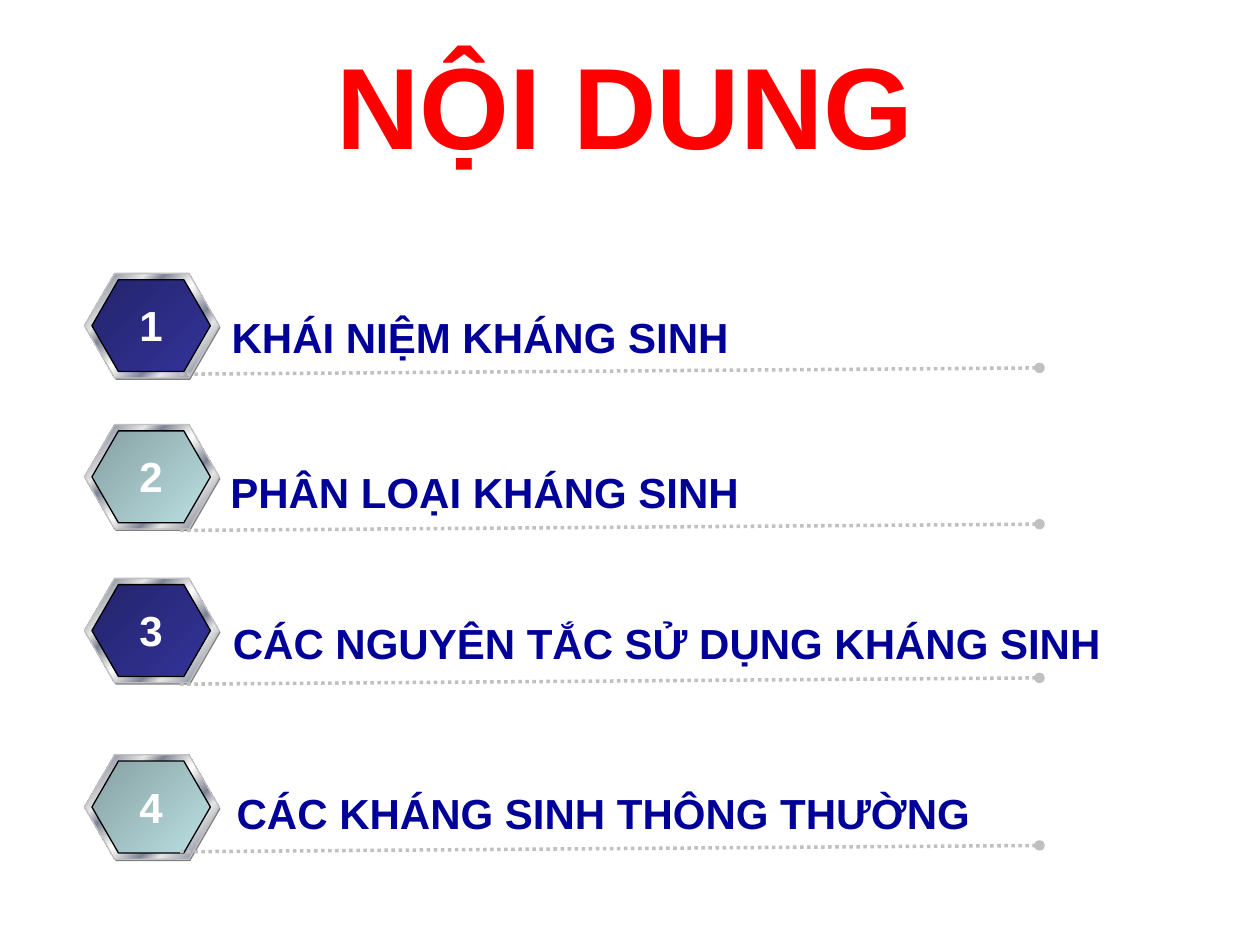
from dataclasses import dataclass

from lxml.etree import SubElement
from pptx import Presentation
from pptx.dml.color import RGBColor
from pptx.enum.dml import MSO_LINE
from pptx.enum.shapes import MSO_CONNECTOR, MSO_SHAPE
from pptx.enum.text import MSO_ANCHOR, PP_ALIGN
from pptx.oxml.ns import qn
from pptx.util import Inches, Pt

COLORS = {
    "title": "FF0000", "label": "000099", "number": "FFFFFF",
    "shadow": "808080", "rim": "C0C0C0", "edge": "000000", "rule": "C0C0C0",
    "silver": "E6E6E6", "steel": "7D8496", "shine": "FFFFFF",
    "navy_dark": "24246D", "navy": "333399",
    "teal_dark": "86A0A2", "teal": "BBE0E3",
}
COLS, ROWS = 100, 75
WIDTH, HEIGHT = Inches(10), Inches(7.5)
METAL = [(0, "silver"), (8, "steel"), (26, "silver"), (34, "steel"),
         (46, "silver"), (50, "shine"), (54, "silver"), (66, "steel"),
         (74, "silver"), (92, "steel"), (100, "silver")]
NAVY = [(0, "navy_dark"), (100, "navy")]
TEAL = [(0, "teal_dark"), (100, "teal")]


@dataclass
class Item:
    """An agenda entry placed in grid columns and rows."""
    text: str
    top: float
    label_col: float
    label_row: float
    rule_row: float


ITEMS = [
    Item("KHÁI NIỆM KHÁNG SINH", 21.7, 17.4, 24.2, 29.7),
    Item("PHÂN LOẠI KHÁNG SINH", 33.7, 17.3, 36.5, 42.1),
    Item("CÁC NGUYÊN TẮC SỬ DỤNG KHÁNG SINH", 45.9, 17.5, 48.5, 54.3),
    Item("CÁC KHÁNG SINH THÔNG THƯỜNG", 59.9, 17.8, 62, 67.6),
]


def x(col: float) -> int:
    """Convert columns to a length."""
    return int(WIDTH * col / COLS)


def y(row: float) -> int:
    """Convert rows to a length."""
    return int(HEIGHT * row / ROWS)


def rgb(name: str) -> RGBColor:
    """Look up a named colour."""
    return RGBColor.from_string(COLORS[name])


def add_text(s, text: str, col: float, row: float, cols: float, rows: float,
             size: float, color: str, align=PP_ALIGN.LEFT,
             anchor=MSO_ANCHOR.TOP) -> None:
    """Add one bold line of text."""
    tf = s.shapes.add_textbox(x(col), y(row), x(cols), y(rows)).text_frame
    tf.word_wrap = True
    tf.vertical_anchor = anchor
    p = tf.paragraphs[0]
    p.text = text
    p.alignment = align
    p.font.name, p.font.size, p.font.bold = "Arial", Pt(size), True
    p.font.color.rgb = rgb(color)


def add_hexagon(s, col: float, row: float, cols: float, rows: float):
    """Add a hexagon without a shadow."""
    sp = s.shapes.add_shape(MSO_SHAPE.HEXAGON, x(col), y(row), x(cols), y(rows))
    sp.adjustments[0] = 0.289
    sp.shadow.inherit = False
    return sp


def set_gradient(sp, stops: list[tuple[int, str]], edge: str) -> None:
    """Fill with a diagonal gradient and outline the shape."""
    sp.fill.gradient()
    sp.fill.gradient_angle = 315
    gs_list = sp._element.spPr.find(qn("a:gradFill")).find(qn("a:gsLst"))
    for gs in list(gs_list):
        gs_list.remove(gs)
    for percent, name in stops:
        gs = SubElement(gs_list, qn("a:gs"), pos=str(percent * 1000))
        SubElement(gs, qn("a:srgbClr"), val=COLORS[name])
    sp.line.color.rgb = rgb(edge)
    sp.line.width = Pt(0.75)


def add_badge(s, top: float, stops: list[tuple[int, str]]) -> None:
    """Draw a metal-rimmed hexagon badge."""
    sp = add_hexagon(s, 6.8, top + 0.15, 10.7, 8.3)
    sp.fill.solid()
    sp.fill.fore_color.rgb = rgb("shadow")
    sp.line.fill.background()
    set_gradient(add_hexagon(s, 6.7, top, 10.7, 8.3), METAL, "rim")
    set_gradient(add_hexagon(s, 7.3, top + 0.5, 9.4, 7.3), stops, "edge")


def add_rule(s, row: float) -> None:
    """Draw a dotted rule that rises to a round end."""
    line = s.shapes.add_connector(
        MSO_CONNECTOR.STRAIGHT, x(14.3), y(row), x(82.5), y(row - 0.5))
    line.line.color.rgb = rgb("rule")
    line.line.width = Pt(2)
    line.line.dash_style = MSO_LINE.ROUND_DOT
    SubElement(line.line._get_or_add_ln(), qn("a:tailEnd"), type="oval")
    SubElement(line._element.spPr, qn("a:effectLst"))


def main() -> None:
    """Build the agenda slide."""
    prs = Presentation()
    prs.slide_width, prs.slide_height = WIDTH, HEIGHT
    s = prs.slides.add_slide(prs.slide_layouts[6])
    add_text(s, "NỘI DUNG", 2.5, 0.9, 94.2, 14.6, 66, "title",
             PP_ALIGN.CENTER, MSO_ANCHOR.MIDDLE)
    for number, item in enumerate(ITEMS, 1):
        add_badge(s, item.top, NAVY if number % 2 else TEAL)
        add_rule(s, item.rule_row)
        add_text(s, item.text, item.label_col, item.label_row, 75, 5.1, 24, "label")
        add_text(s, str(number), 9.5, item.top + 1.6, 5, 5.1, 24, "number",
                 PP_ALIGN.CENTER)
    prs.save("out.pptx")


if __name__ == "__main__":
    main()
